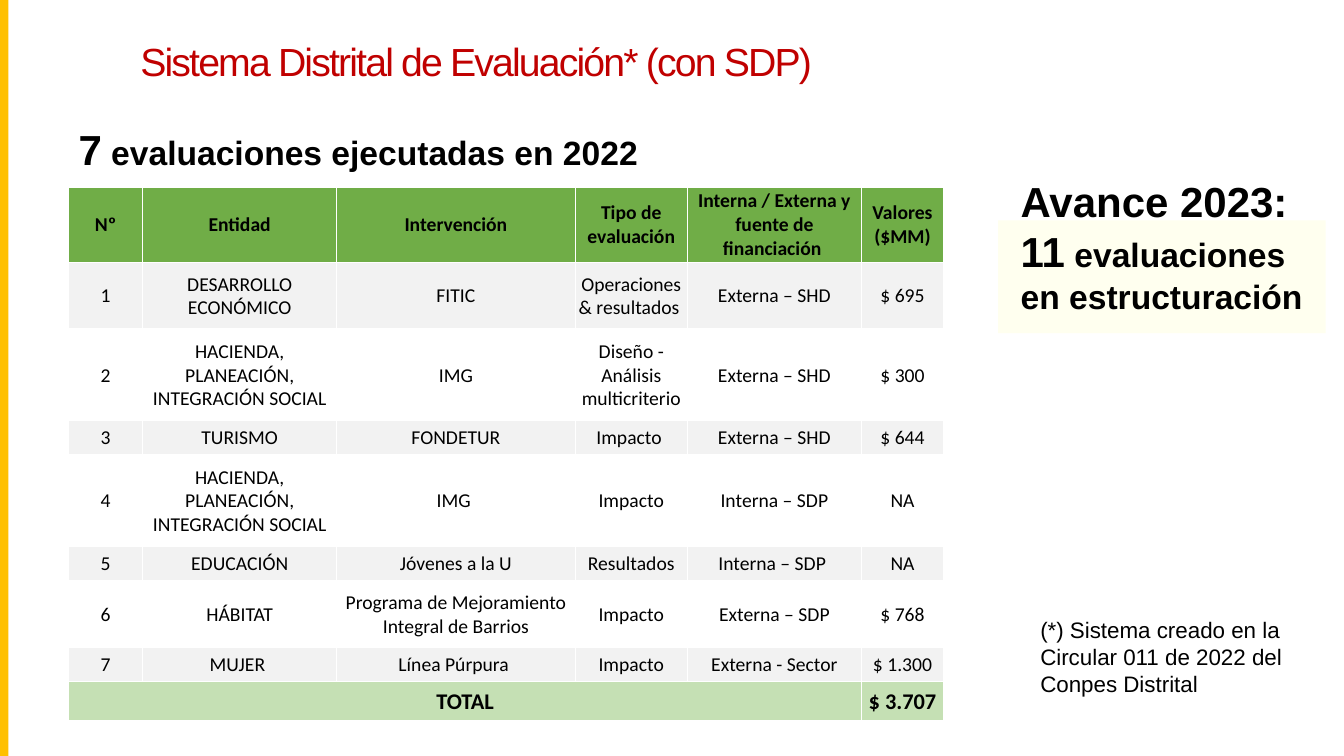
from lxml import etree
from pptx import Presentation
from pptx.dml.color import RGBColor
from pptx.enum.shapes import MSO_SHAPE
from pptx.enum.text import MSO_ANCHOR, PP_ALIGN
from pptx.oxml.ns import qn
from pptx.util import Pt

RECT = MSO_SHAPE.RECTANGLE
TOP, MIDDLE = MSO_ANCHOR.TOP, MSO_ANCHOR.MIDDLE
LEFT, CENTER = PP_ALIGN.LEFT, PP_ALIGN.CENTER

TITLE = "Sistema Distrital de Evaluación* (con SDP)"
HEAD = ["Nº", "Entidad", "Intervención", "Tipo de evaluación",
        "Interna / Externa y fuente de financiación ", "Valores ($MM)"]
TRIO = "HACIENDA, PLANEACIÓN, INTEGRACIÓN SOCIAL"
BODY = [
    ["1", "DESARROLLO ECONÓMICO", "FITIC", "Operaciones & resultados ", "Externa – SHD", "$ 695"],
    ["2", TRIO, "IMG", "Diseño - Análisis multicriterio", "Externa – SHD", "$ 300"],
    ["3", "TURISMO", "FONDETUR", "Impacto ", "Externa – SHD", "$ 644"],
    ["4", TRIO, "IMG ", "Impacto", "Interna – SDP", "NA"],
    ["5", "EDUCACIÓN", "Jóvenes a la U", "Resultados", "Interna – SDP ", "NA"],
    ["6", "HÁBITAT", "Programa de Mejoramiento Integral de Barrios", "Impacto", "Externa – SDP", "$ 768"],
    ["7", "MUJER ", "Línea Púrpura ", "Impacto", "Externa - Sector", "$ 1.300"],
]
TOTAL = ["TOTAL", "", "", "", "", "$ 3.707"]
WIDTHS = [53, 138.5, 170.5, 80, 124.5, 58.5]
HEIGHTS = [53.5, 47.5, 65.5, 24.5, 65.5, 24.5, 47.5, 24.5, 27.5]
BARS = [((0, 0, 6, 540), "FFC000"), ((713, 157.5, 234, 80.5), "FFFFEF")]
NOTES = [
    ((736, 436.5, 197, 65.5),
     [("(*) Sistema creado en la Circular 011 de 2022 del Conpes Distrital", 16, False)]),
    ((49, 85, 650, 73), [("7", 30, True), (" evaluaciones ejecutadas en 2022", 24, True)]),
    ((722, 121.5, 224.5, 109),
     [("Avance 2023: \v11", 30, True), (" evaluaciones en estructuración", 24, True)]),
]


def color(code):
    return RGBColor.from_string(code)


def pts(box):
    return [Pt(n) for n in box]


def style(font, name, size, bold, code="000000"):
    font.name, font.size, font.bold = name, Pt(size), bold
    font.color.rgb = color(code)


def border(cell):
    props = cell._tc.get_or_add_tcPr()
    for i, side in enumerate(("a:lnL", "a:lnR", "a:lnT", "a:lnB")):
        line = etree.Element(qn(side), w="12700")
        fill = etree.SubElement(line, qn("a:solidFill"))
        etree.SubElement(fill, qn("a:srgbClr"), val="FFFFFF")
        props.insert(i, line)


def fill_cell(cell, text, size, bold, code, inset):
    cell.text = text
    cell.vertical_anchor = MIDDLE
    cell.margin_left = cell.margin_right = cell.margin_top = Pt(inset)
    cell.margin_bottom = 0
    cell.fill.solid()
    cell.fill.fore_color.rgb = color(code)
    border(cell)
    para = cell.text_frame.paragraphs[0]
    para.alignment = CENTER
    for run in para.runs:
        style(run.font, "Calibri", size, bold)


def add_grid(slide):
    rows = [HEAD, *BODY, TOTAL]
    box = pts((49, 134, sum(WIDTHS), sum(HEIGHTS)))
    grid = slide.shapes.add_table(len(rows), len(HEAD), *box).table
    grid.first_row = grid.horz_banding = False
    for col, width in zip(grid.columns, WIDTHS):
        col.width = Pt(width)
    last = len(rows) - 1
    for r, row in enumerate(rows):
        grid.rows[r].height = Pt(HEIGHTS[r])
        if r == 0:
            look = (14, True, "70AD47", 0)
        elif r == last:
            look = (16, True, "C5E0B4", 0.7)
        else:
            look = (14, False, "F2F2F2" if r % 2 else "FFFFFF", 0.7)
        for c, text in enumerate(row):
            fill_cell(grid.cell(r, c), text, *look)
    grid.cell(last, 0).merge(grid.cell(last, len(HEAD) - 2))


def add_note(slide, box, parts):
    frame = slide.shapes.add_textbox(*pts(box)).text_frame
    frame.word_wrap = True
    para = frame.paragraphs[0]
    para.text = parts[0][0]
    for text, _, _ in parts[1:]:
        para.add_run().text = text
    runs = para.runs
    tail = len(parts) - 1
    first = len(runs) - tail
    for i, run in enumerate(runs):
        _, size, bold = parts[max(0, i - first + 1)]
        style(run.font, "Arial", size, bold)


def set_title(slide):
    title = slide.shapes.title
    title.left, title.top, title.width, title.height = pts((93, 16.5, 757.5, 44))
    frame = title.text_frame
    frame.text = TITLE
    frame.word_wrap = True
    frame.vertical_anchor = TOP
    para = frame.paragraphs[0]
    para.alignment = LEFT
    para.line_spacing = 1.2
    run = para.runs[0]
    style(run.font, "Arial", 28, False, "C00000")
    run.font._element.set("spc", "-130")


def main():
    deck = Presentation()
    deck.slide_width, deck.slide_height = Pt(960), Pt(540)
    slide = deck.slides.add_slide(deck.slide_layouts[5])
    set_title(slide)
    for box, code in BARS:
        bar = slide.shapes.add_shape(RECT, *pts(box))
        bar.shadow.inherit = False
        bar.fill.solid()
        bar.fill.fore_color.rgb = color(code)
        bar.line.fill.background()
    add_grid(slide)
    for box, parts in NOTES:
        add_note(slide, box, parts)
    deck.save("out.pptx")


if __name__ == "__main__":
    main()
